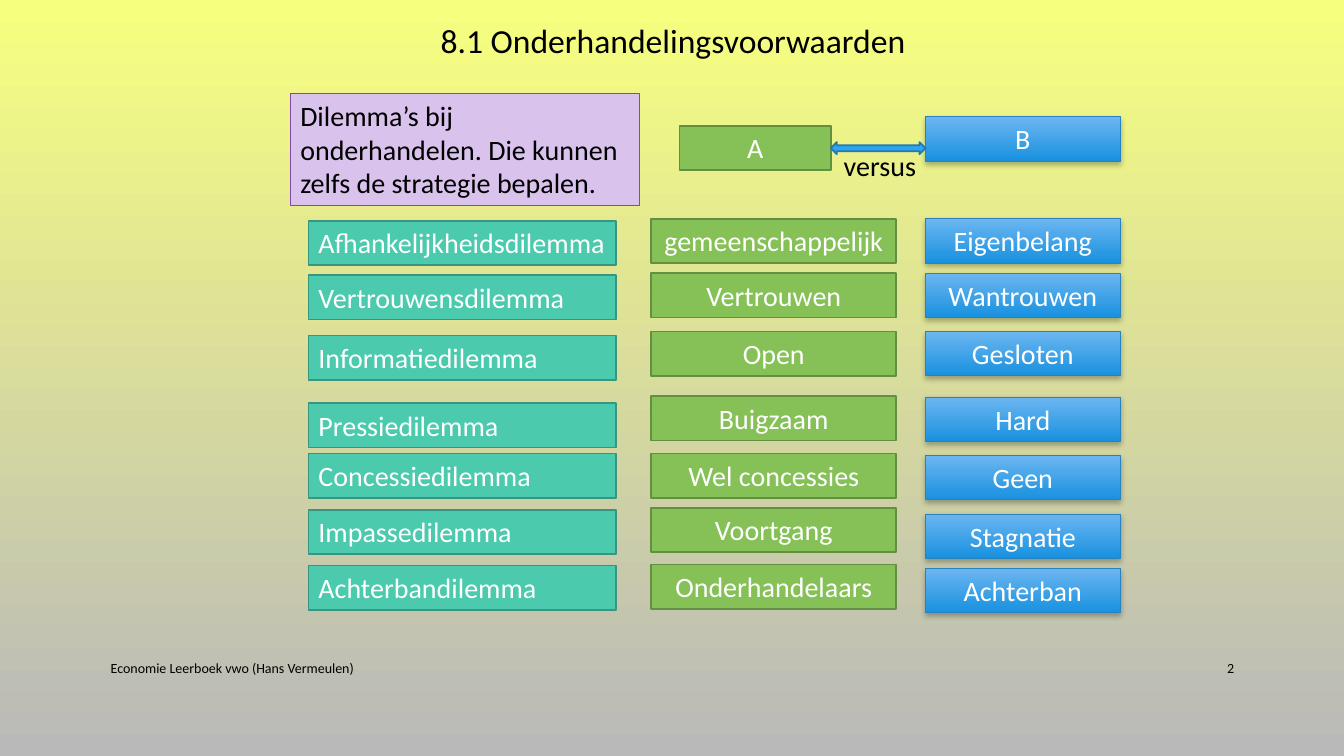
import pptx
import pptx.util
import pptx.dml.color
import pptx.enum.shapes
import pptx.enum.text
from lxml import etree

Inches, Pt = pptx.util.Inches, pptx.util.Pt
RGBColor = pptx.dml.color.RGBColor
SHAPES = pptx.enum.shapes.MSO_SHAPE
ALIGN = pptx.enum.text.PP_ALIGN
ANCHOR = pptx.enum.text.MSO_ANCHOR
FIT = pptx.enum.text.MSO_AUTO_SIZE

BLACK = RGBColor(0x00, 0x00, 0x00)
WHITE = RGBColor(0xFF, 0xFF, 0xFF)
YELLOW = RGBColor(0xF7, 0xFF, 0x7F)
GREY = RGBColor(0xB9, 0xB9, 0xB9)
TEAL, TEAL_EDGE = RGBColor(0x4B, 0xCA, 0xAD), RGBColor(0x37, 0x95, 0x80)
GREEN, GREEN_EDGE = RGBColor(0x86, 0xC1, 0x57), RGBColor(0x63, 0x8F, 0x40)
LILAC, PURPLE = RGBColor(0xD9, 0xC3, 0xEC), RGBColor(0x83, 0x4A, 0xA7)
SKY, BLUE = RGBColor(0x6C, 0xB6, 0xF1), RGBColor(0x18, 0x91, 0xDF)
BLUE_EDGE = RGBColor(0x26, 0x83, 0xBF)
ARROW, ARROW_EDGE = RGBColor(0x2F, 0xA3, 0xEE), RGBColor(0x23, 0x79, 0xB0)

DILEMMA_LEFT, DILEMMA_WIDTH = 3.06, 3.05
A_LEFT, A_WIDTH = 6.46, 2.43
B_LEFT, B_WIDTH = 9.18, 1.93
ROW_HEIGHT = 0.44

# Tops of the dilemma, A and B boxes, followed by their words
DILEMMAS = [
    (2.19, 2.17, 2.17, "Afhankelijkheidsdilemma", "gemeenschappelijk", "Eigenbelang"),
    (2.73, 2.71, 2.71, "Vertrouwensdilemma", "Vertrouwen", "Wantrouwen"),
    (3.33, 3.29, 3.29, "Informatiedilemma", "Open", "Gesloten"),
    (4.00, 3.93, 3.94, "Pressiedilemma", "Buigzaam", "Hard"),
    (4.50, 4.50, 4.52, "Concessiedilemma", "Wel concessies", "Geen"),
    (5.06, 5.04, 5.10, "Impassedilemma", "Voortgang", "Stagnatie"),
    (5.61, 5.60, 5.64, "Achterbandilemma", "Onderhandelaars", "Achterban"),
]


def write(shape, words, size, color, align=ALIGN.LEFT, anchor=ANCHOR.TOP):
    frame = shape.text_frame
    frame.word_wrap = True
    frame.vertical_anchor = anchor
    frame.auto_size = FIT.SHAPE_TO_FIT_TEXT if anchor == ANCHOR.TOP else FIT.NONE
    frame.text = words
    paragraph = frame.paragraphs[0]
    paragraph.alignment = align
    paragraph.font.name = "Calibri"
    paragraph.font.size = Pt(size)
    paragraph.font.color.rgb = color


def add_box(place, fill, edge, edge_width, kind=SHAPES.RECTANGLE):
    """Add a bordered shape; a pair of fills gives a raised box with a gradient."""
    box = slide.shapes.add_shape(kind, *map(Inches, place))
    box.shadow.inherit = False
    box.line.color.rgb = edge
    box.line.width = Pt(edge_width)
    if isinstance(fill, list):
        box.fill.gradient()
        box.fill.gradient_angle = 270
        for stop, color in zip(box.fill.gradient_stops, fill):
            stop.color.rgb = color
        effects = box._element.spPr.find(pptx.oxml.ns.qn("a:effectLst"))
        shadow = etree.SubElement(
            effects, pptx.oxml.ns.qn("a:outerShdw"), blurRad=str(Pt(4)),
            dist=str(Pt(2)), dir="5400000", algn="ctr", rotWithShape="0")
        tint = etree.SubElement(shadow, pptx.oxml.ns.qn("a:srgbClr"), val="000000")
        etree.SubElement(tint, pptx.oxml.ns.qn("a:alpha"), val="28000")
    else:
        box.fill.solid()
        box.fill.fore_color.rgb = fill
    return box


deck = pptx.Presentation()
deck.slide_width, deck.slide_height = Inches(13.33), Inches(7.5)
slide = deck.slides.add_slide(deck.slide_layouts[5])

backdrop = slide.background.fill
backdrop.gradient()
backdrop.gradient_angle = 270
for stop, color in zip(backdrop.gradient_stops, (YELLOW, GREY)):
    stop.color.rgb = color

heading = slide.shapes.title
heading.left, heading.top = Inches(4.27), Inches(0.15)
heading.width, heading.height = Inches(6.24), Inches(0.5)
write(heading, "8.1 Onderhandelingsvoorwaarden", 24, BLACK)

# Introduction and the two opposing sides
intro = add_box((2.88, 0.93, 3.46, 1.11), LILAC, PURPLE, 0.75)
write(intro, "Dilemma’s bij onderhandelen. Die kunnen zelfs de strategie bepalen.", 20, BLACK)
side_a = add_box((6.74, 1.25, 1.5, ROW_HEIGHT), GREEN, GREEN_EDGE, 1.25)
write(side_a, "A", 20, WHITE, ALIGN.CENTER)
side_b = add_box((B_LEFT, 1.16, B_WIDTH, ROW_HEIGHT), [SKY, BLUE], BLUE_EDGE, 0.75)
write(side_b, "B", 20, WHITE, ALIGN.CENTER)
add_box((8.24, 1.41, 0.94, 0.12), ARROW, ARROW_EDGE, 1.25, SHAPES.LEFT_RIGHT_ARROW)
versus = slide.shapes.add_textbox(*map(Inches, (8.27, 1.42, 0.94, ROW_HEIGHT)))
write(versus, "versus", 20, BLACK)

# Seven dilemmas, each with its A and B position
for dilemma_top, a_top, b_top, dilemma, a_word, b_word in DILEMMAS:
    name_box = add_box((DILEMMA_LEFT, dilemma_top, DILEMMA_WIDTH, ROW_HEIGHT),
                       TEAL, TEAL_EDGE, 1.25)
    write(name_box, dilemma, 20, WHITE)
    a_box = add_box((A_LEFT, a_top, A_WIDTH, ROW_HEIGHT), GREEN, GREEN_EDGE, 1.25)
    write(a_box, a_word, 20, WHITE, ALIGN.CENTER)
    b_box = add_box((B_LEFT, b_top, B_WIDTH, ROW_HEIGHT), [SKY, BLUE], BLUE_EDGE, 0.75)
    write(b_box, b_word, 20, WHITE, ALIGN.CENTER)

# Footer
for left, width, words, align in [
    (1, 7.3, "Economie Leerboek vwo (Hans Vermeulen)", ALIGN.LEFT),
    (11.5, 0.84, "2", ALIGN.RIGHT),
]:
    footer = slide.shapes.add_textbox(*map(Inches, (left, 6.43, width, 0.4)))
    write(footer, words, 10, BLACK, align, ANCHOR.MIDDLE)

deck.save("out.pptx")
